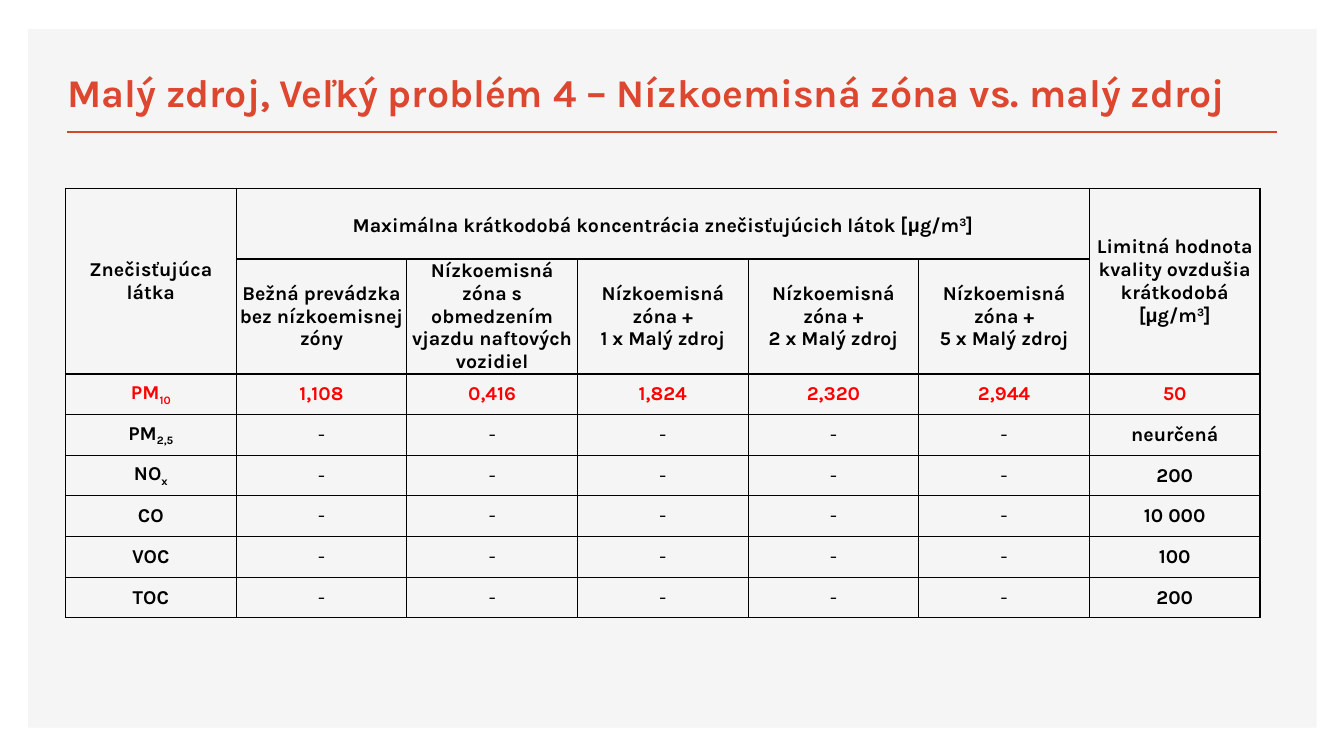
from lxml.etree import SubElement
from pptx import Presentation
from pptx.dml.color import RGBColor
from pptx.enum.shapes import MSO_CONNECTOR as Link, MSO_SHAPE as Shape
from pptx.enum.text import MSO_ANCHOR as Anchor, PP_ALIGN as Align
from pptx.oxml.ns import qn
from pptx.util import Inches, Pt

FONT = "Karla"
BLACK, RED = "000000", "FF0000"
UNIT = [("[", 0), ("μ", 0), ("g/m", 0), ("3", 30), ("]", 0)]
ZONE = "Nízkoemisná zóna +"
HEADS = [
    ["Bežná prevádzka bez nízkoemisnej zóny"],
    ["Nízkoemisná zóna s obmedzením vjazdu naftových vozidiel"],
] + [[ZONE, f"{count} x Malý zdroj"] for count in (1, 2, 5)]
DASHES = ["-"] * 5
# Pollutant, subscript, five concentrations, limit
ROWS = [
    ("PM", "10", ["1,108", "0,416", "1,824", "2,320", "2,944"], "50"),
    ("PM", "2,5", DASHES, "neurčená"),
    ("NO", "x", DASHES, "200"),
    ("CO", "", DASHES, "10 000"),
    ("VOC", "", DASHES, "100"),
    ("TOC", "", DASHES, "200"),
]


def paint(code):
    return RGBColor.from_string(code)


def add_run(para, text, size, color, bold=True, base=0):
    """Add one run; base is the super- or subscript shift in percent."""
    run = para.add_run()
    run.text = text
    font = run.font
    font.name = "Arial" if text == "μ" else FONT
    font.size, font.bold = Pt(size), bold
    font.color.rgb = paint(color)
    if base:
        font._element.set("baseline", str(base * 1000))


def draw_frame(slide, left, top, width, height):
    """Draw the grey panel with the rule under the title."""
    panel = slide.shapes.add_shape(
        Shape.RECTANGLE, Inches(left), Inches(top), Inches(width), Inches(height))
    panel.shadow.inherit = False
    panel.fill.solid()
    panel.fill.fore_color.rgb = paint("F5F5F5")
    panel.line.fill.background()
    level = Inches(top + 1.02)
    rule = slide.shapes.add_connector(
        Link.STRAIGHT, Inches(left + 0.38), level, Inches(left + width - 0.39), level)
    rule.line.color.rgb = paint("D24726")
    rule.line.width = Pt(2)
    SubElement(rule._element.spPr, qn("a:effectLst"))


def draw_title(slide, left, top, width, height):
    box = slide.shapes.add_textbox(
        Inches(left), Inches(top), Inches(width), Inches(height))
    frame = box.text_frame
    frame.word_wrap = True
    frame.vertical_anchor = Anchor.BOTTOM
    add_run(frame.paragraphs[0],
            "Malý zdroj, Veľký problém 4 – Nízkoemisná zóna vs. malý zdroj",
            28, "DD462F")


def style_cell(cell):
    """Give the cell thin black borders, no fill and tight margins."""
    props = cell._tc.get_or_add_tcPr()
    for side in ("lnL", "lnR", "lnT", "lnB"):
        edge = SubElement(props, qn(f"a:{side}"), w=str(Pt(1)))
        fill = SubElement(edge, qn("a:solidFill"))
        SubElement(fill, qn("a:srgbClr"), val=BLACK)
    cell.fill.background()
    cell.vertical_anchor = Anchor.MIDDLE
    cell.margin_left = cell.margin_right = Inches(0.03)
    cell.margin_top = cell.margin_bottom = 0


def fill_cell(cell, paras, color=BLACK, bold=True, space=None):
    """Write paragraphs, each a string or a list of (text, base) runs."""
    frame = cell.text_frame
    for pos, parts in enumerate(paras):
        para = frame.add_paragraph() if pos else frame.paragraphs[0]
        para.alignment = Align.CENTER
        if space:
            para.line_spacing = space
        runs = [(parts, 0)] if isinstance(parts, str) else parts
        for text, base in runs:
            add_run(para, text, 14, color, bold, base)


def draw_table(slide, left, top, width, height):
    highs = [0.7, 1.14]
    highs += [(height - sum(highs)) / len(ROWS)] * len(ROWS)
    cols = len(HEADS) + 2
    table = slide.shapes.add_table(
        len(highs), cols, Inches(left), Inches(top),
        Inches(width), Inches(height)).table
    table.first_row = table.horz_banding = False
    for col in table.columns:
        col.width = Inches(width / cols)
    for row, high in zip(table.rows, highs):
        row.height = Inches(high)
    for cell in table.iter_cells():
        style_cell(cell)

    last = cols - 1
    for col in (0, last):
        table.cell(0, col).merge(table.cell(1, col))
    table.cell(0, 1).merge(table.cell(0, last - 1))
    fill_cell(table.cell(0, 0), ["Znečisťujúca", "látka"])
    fill_cell(table.cell(0, 1), [
        [("Maximálna krátkodobá koncentrácia znečisťujúcich látok ", 0)] + UNIT],
        space=1.15)
    fill_cell(table.cell(0, last), [
        [("Limitná hodnota kvality ovzdušia krátkodobá ", 0)] + UNIT])
    for col, head in enumerate(HEADS, 1):
        fill_cell(table.cell(1, col), head)

    for row, (name, sub, values, limit) in enumerate(ROWS, 2):
        color = RED if sub == "10" else BLACK
        label = [(name, 0), (sub, -25)] if sub else name
        fill_cell(table.cell(row, 0), [label], color)
        for col, value in enumerate(values, 1):
            cell = table.cell(row, col)
            cell.margin_left = cell.margin_right = Inches(0.07)
            fill_cell(cell, [value], color, value != "-")
        fill_cell(table.cell(row, last), [limit], color)


def main():
    deck = Presentation()
    deck.slide_width, deck.slide_height = Inches(13.33), Inches(7.5)
    slide = deck.slides.add_slide(deck.slide_layouts[6])
    draw_frame(slide, 0.28, 0.29, 12.78, 6.93)
    draw_table(slide, 0.65, 1.87, 11.85, 4.26)
    draw_title(slide, 0.57, 0.49, 11.73, 0.7)
    deck.save("out.pptx")


if __name__ == "__main__":
    main()
